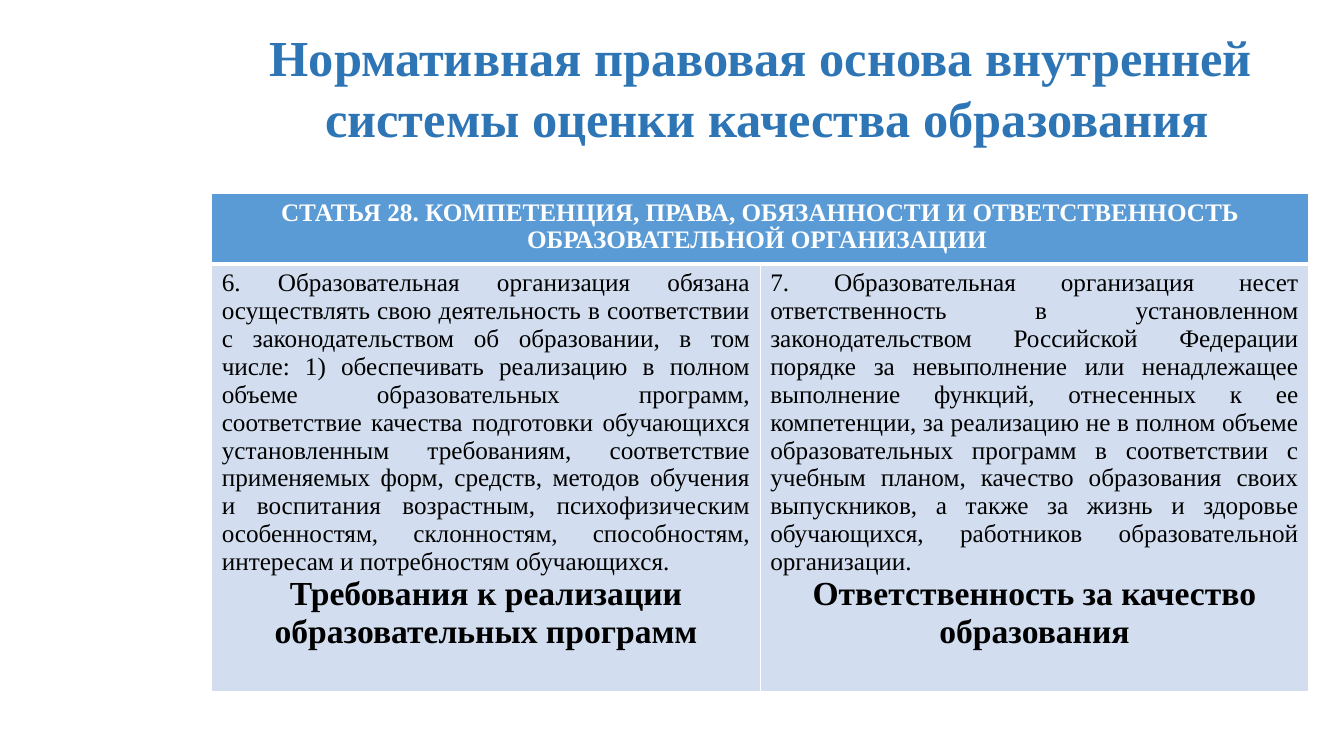
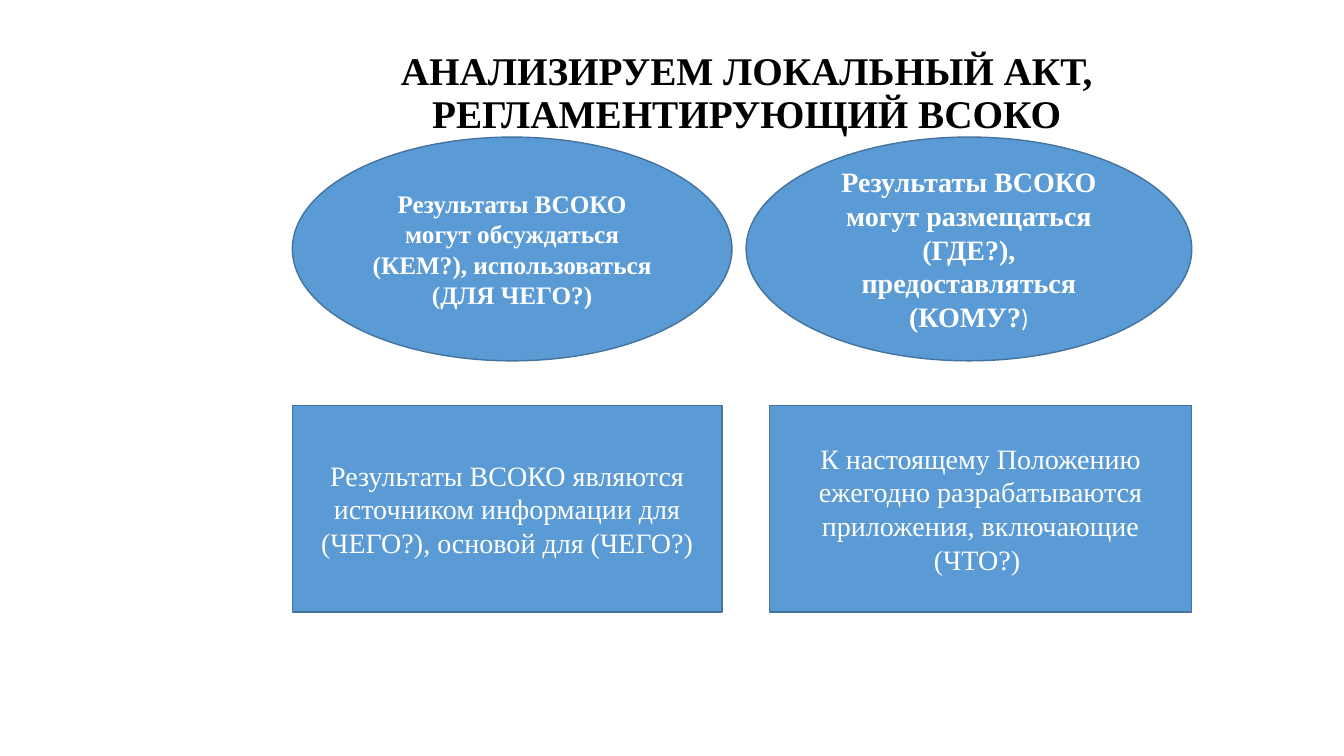
"""Build two slides on the internal system for assessing education quality."""
from dataclasses import dataclass

from lxml import etree
from pptx import Presentation
from pptx.dml.color import RGBColor
from pptx.enum.shapes import MSO_SHAPE
from pptx.enum.text import MSO_ANCHOR, PP_ALIGN
from pptx.oxml.ns import qn
from pptx.presentation import Presentation as Deck
from pptx.slide import Slide
from pptx.table import _Cell
from pptx.text.text import Font, TextFrame, _Paragraph
from pptx.util import Inches, Pt

WHITE = RGBColor(0xFF, 0xFF, 0xFF)
BLACK = RGBColor(0x00, 0x00, 0x00)
TITLE_BLUE = RGBColor(0x2E, 0x75, 0xB6)
ACCENT_BLUE = RGBColor(0x5B, 0x9B, 0xD5)
OUTLINE_BLUE = RGBColor(0x43, 0x73, 0x9E)
PALE_BLUE = RGBColor(0xD2, 0xDE, 0xEF)
SERIF = "Times New Roman"
SANS = "Calibri"
CENTER = PP_ALIGN.CENTER
JUSTIFY = PP_ALIGN.JUSTIFY
MIDDLE = MSO_ANCHOR.MIDDLE
ELLIPSE = MSO_SHAPE.OVAL
RECTANGLE = MSO_SHAPE.RECTANGLE


@dataclass(frozen=True)
class Box:
    left: float
    top: float
    width: float
    height: float

    def lengths(self) -> tuple[Inches, Inches, Inches, Inches]:
        return (Inches(self.left), Inches(self.top),
                Inches(self.width), Inches(self.height))


@dataclass(frozen=True)
class TextStyle:
    size: int
    color: RGBColor
    bold: bool = False
    name: str = SERIF
    align: PP_ALIGN = CENTER
    line_spacing: float | None = None


@dataclass(frozen=True)
class Question:
    kind: MSO_SHAPE
    box: Box
    text: str
    style: TextStyle
    ending: str = ""


@dataclass(frozen=True)
class Clause:
    text: str
    summary: str


HEADER_STYLE = TextStyle(18, WHITE, bold=True)
CLAUSE_STYLE = TextStyle(18, BLACK, align=JUSTIFY)
SUMMARY_STYLE = TextStyle(24, BLACK, bold=True)
ENDING_STYLE = TextStyle(18, WHITE, name=SANS)
QUESTION_STYLE = TextStyle(20, WHITE)

TABLE_BOX = Box(2.1, 1.92, 10.88, 4.9)
HEADER_HEIGHT = 0.66
HEADER = ("СТАТЬЯ 28. КОМПЕТЕНЦИЯ, ПРАВА, ОБЯЗАННОСТИ И ОТВЕТСТВЕННОСТЬ "
          "ОБРАЗОВАТЕЛЬНОЙ ОРГАНИЗАЦИИ ")
CLAUSES = (
    Clause(
        "6. Образовательная организация обязана осуществлять свою деятельность "
        "в соответствии с законодательством об образовании, в том числе: "
        "1) обеспечивать реализацию в полном объеме образовательных программ, "
        "соответствие качества подготовки обучающихся установленным требованиям, "
        "соответствие применяемых форм, средств, методов обучения и воспитания "
        "возрастным, психофизическим особенностям, склонностям, способностям, "
        "интересам и потребностям обучающихся.",
        "Требования к реализации образовательных программ"),
    Clause(
        "7. Образовательная организация несет ответственность в установленном "
        "законодательством Российской Федерации порядке за невыполнение или "
        "ненадлежащее выполнение функций, отнесенных к ее компетенции, за "
        "реализацию не в полном объеме образовательных программ в соответствии с "
        "учебным планом, качество образования своих выпускников, а также за жизнь "
        "и здоровье обучающихся, работников образовательной организации.",
        "Ответственность за качество образования"),
)

LEFT = 2.9
RIGHT = 11.82
ELLIPSE_TOP, ELLIPSE_HEIGHT = 1.36, 2.22
RECTANGLE_TOP, RECTANGLE_HEIGHT = 4.02, 2.05
QUESTIONS = (
    Question(ELLIPSE, Box(LEFT, ELLIPSE_TOP, 4.36, ELLIPSE_HEIGHT),
             "Результаты ВСОКО могут обсуждаться (КЕМ?), использоваться (ДЛЯ ЧЕГО?)",
             TextStyle(18, WHITE, bold=True)),
    Question(ELLIPSE, Box(RIGHT - 4.42, ELLIPSE_TOP, 4.42, ELLIPSE_HEIGHT),
             "Результаты ВСОКО могут размещаться (ГДЕ?), предоставляться (КОМУ?",
             TextStyle(20, WHITE, bold=True), ")"),
    Question(RECTANGLE, Box(LEFT, RECTANGLE_TOP, 4.26, RECTANGLE_HEIGHT),
             "Результаты ВСОКО являются источником информации для (ЧЕГО?), "
             "основой для (ЧЕГО?)", QUESTION_STYLE),
    Question(RECTANGLE, Box(RIGHT - 4.19, RECTANGLE_TOP, 4.19, RECTANGLE_HEIGHT),
             "К настоящему Положению ежегодно разрабатываются приложения, "
             "включающие (ЧТО?) ", QUESTION_STYLE),
)


def set_font(font: Font, style: TextStyle) -> None:
    font.name = style.name
    font.size = Pt(style.size)
    font.bold = style.bold
    font.color.rgb = style.color


def write_paragraph(paragraph: _Paragraph, text: str, style: TextStyle) -> None:
    paragraph.text = text
    paragraph.alignment = style.align
    if style.line_spacing:
        paragraph.line_spacing = style.line_spacing
    set_font(paragraph.font, style)


def add_title(slide: Slide, box: Box, text: str, style: TextStyle) -> None:
    frame: TextFrame = slide.shapes.add_textbox(*box.lengths()).text_frame
    frame.word_wrap = True
    frame.vertical_anchor = MIDDLE
    write_paragraph(frame.paragraphs[0], text, style)


def add_question(slide: Slide, question: Question) -> None:
    shape = slide.shapes.add_shape(question.kind, *question.box.lengths())
    shape.shadow.inherit = False
    shape.fill.solid()
    shape.fill.fore_color.rgb = ACCENT_BLUE
    shape.line.color.rgb = OUTLINE_BLUE
    shape.line.width = Pt(1)
    frame = shape.text_frame
    frame.word_wrap = True
    frame.vertical_anchor = MIDDLE
    paragraph = frame.paragraphs[0]
    write_paragraph(paragraph, question.text, question.style)
    if question.ending:
        set_font(paragraph.runs[0].font, question.style)
        ending = paragraph.add_run()
        ending.text = question.ending
        set_font(ending.font, ENDING_STYLE)


def format_cell(cell: _Cell, fill: RGBColor, top: int, bottom: int) -> None:
    properties = cell._tc.get_or_add_tcPr()
    for side, points in (("L", 1), ("R", 1), ("T", top), ("B", bottom)):
        border = etree.SubElement(properties, qn(f"a:ln{side}"), w=str(Pt(points)))
        solid = etree.SubElement(border, qn("a:solidFill"))
        etree.SubElement(solid, qn("a:srgbClr"), val=str(WHITE))
    cell.fill.solid()
    cell.fill.fore_color.rgb = fill


def add_clause_table(slide: Slide) -> None:
    table = slide.shapes.add_table(2, len(CLAUSES), *TABLE_BOX.lengths()).table
    table.rows[0].height = Inches(HEADER_HEIGHT)
    table.rows[1].height = Inches(TABLE_BOX.height - HEADER_HEIGHT)
    header = table.cell(0, 0)
    header.merge(table.cell(0, len(CLAUSES) - 1))
    write_paragraph(header.text_frame.paragraphs[0], HEADER, HEADER_STYLE)
    for column, clause in enumerate(CLAUSES):
        format_cell(table.cell(0, column), ACCENT_BLUE, top=1, bottom=3)
        cell = table.cell(1, column)
        format_cell(cell, PALE_BLUE, top=3, bottom=1)
        frame = cell.text_frame
        write_paragraph(frame.paragraphs[0], clause.text, CLAUSE_STYLE)
        write_paragraph(frame.add_paragraph(), clause.summary, SUMMARY_STYLE)


def add_blank_slide(presentation: Deck) -> Slide:
    return presentation.slides.add_slide(presentation.slide_layouts[6])


def main() -> None:
    presentation = Presentation()
    presentation.slide_width = Inches(13.33)
    presentation.slide_height = Inches(7.5)

    legal_slide = add_blank_slide(presentation)
    add_title(legal_slide, Box(2.01, 0.11, 11.2, 1.5),
              "Нормативная правовая основа внутренней \v"
              "системы оценки качества образования",
              TextStyle(36, TITLE_BLUE, bold=True))
    add_clause_table(legal_slide)

    analysis_slide = add_blank_slide(presentation)
    add_title(analysis_slide, Box(2.39, 0.19, 10.03, 1.49),
              "АНАЛИЗИРУЕМ ЛОКАЛЬНЫЙ АКТ, РЕГЛАМЕНТИРУЮЩИЙ ВСОКО",
              TextStyle(28, BLACK, bold=True, line_spacing=0.9))
    for question in QUESTIONS:
        add_question(analysis_slide, question)

    presentation.save("out.pptx")


if __name__ == "__main__":
    main()
